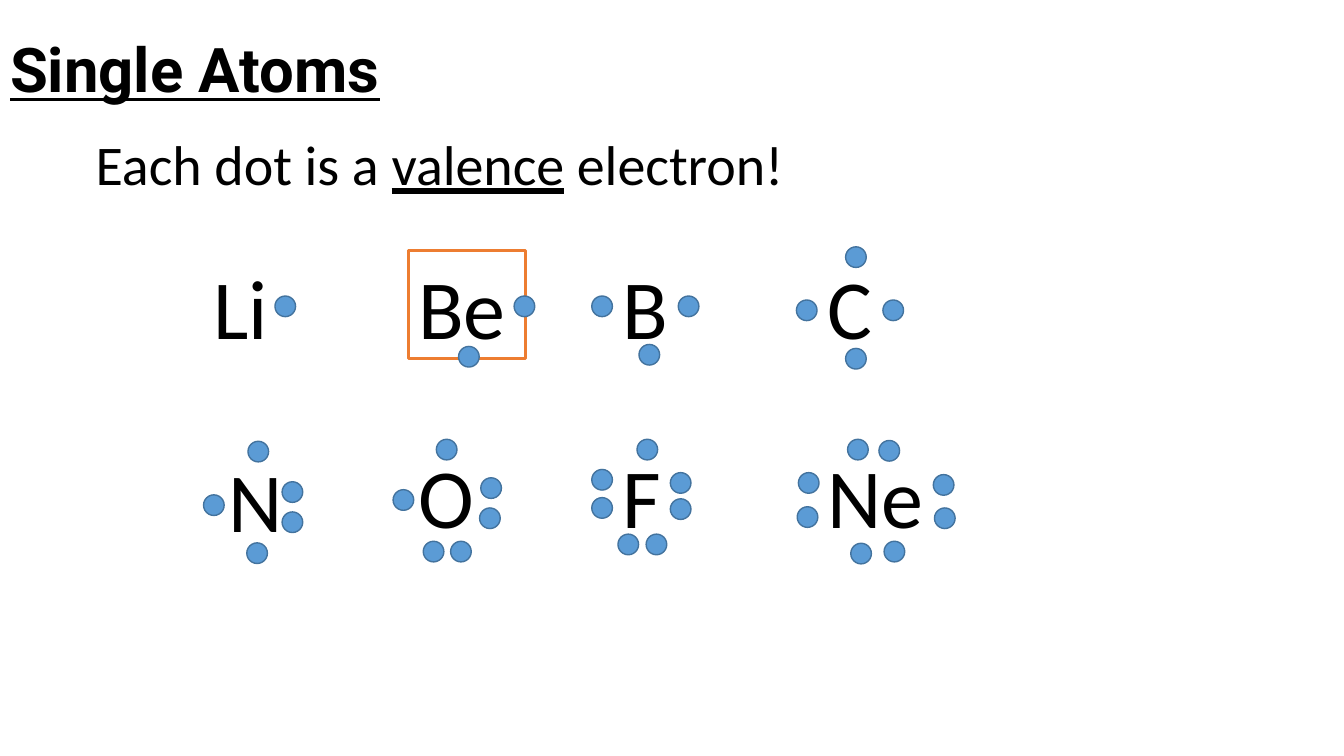
from pptx import Presentation
from pptx.dml.color import RGBColor
from pptx.enum.shapes import MSO_SHAPE
from pptx.enum.text import MSO_ANCHOR, MSO_AUTO_SIZE, PP_ALIGN
from pptx.util import Cm, Pt

HUES = {"text": "000000", "dot": "5B9BD5", "rim": "43739E", "box": "ED7D31"}
LEFT, STEP = 5.13, 5.157
ROWS = (6.32, 11.07)
DOT = 0.52

ATOMS = [
    [
        ("Li", (0, 0), [(1.8, 1.14)]),
        ("Be", (0, 0), [(2.67, 1.14), (1.27, 2.41)]),
        ("B", (0, 0), [(1.65, 1.14), (0.66, 2.36), (-0.53, 1.14)]),
        ("C", (0, 0), [(0.71, -0.1), (1.65, 1.24), (0.71, 2.46), (-0.53, 1.24)]),
    ],
    [
        ("N", (0.38, 0.1), [(0.74, -0.05), (1.6, 0.97), (1.6, 1.73),
                            (0.71, 2.51), (-0.38, 1.3)]),
        ("O", (0, 0), [(0.71, 0), (1.83, 0.97), (1.8, 1.73),
                       (1.07, 2.57), (0.38, 2.57), (-0.38, 1.27)]),
        ("F", (0, 0), [(0.61, 0), (1.45, 0.84), (1.45, 1.5), (0.84, 2.39),
                       (0.13, 2.39), (-0.53, 1.47), (-0.53, 0.76)]),
        ("Ne", (0, 0), [(0.76, 0), (1.55, 0.03), (2.92, 0.89), (2.95, 1.73),
                        (1.68, 2.57), (0.84, 2.62), (-0.51, 1.7), (-0.48, 0.84)]),
    ],
]


def hue(name):
    return RGBColor.from_string(HUES[name])


def add_run(para, text, size, face="Calibri", bold=False, under=False):
    run = para.add_run()
    run.text = text
    font = run.font
    font.name, font.size = face, Pt(size)
    font.bold, font.underline = bold, under
    font.color.rgb = hue("text")


def set_title(slide, text):
    title = slide.shapes.title
    title.left, title.top = Cm(0), Cm(0)
    title.width, title.height = Cm(33.87), Cm(3.68)
    frame = title.text_frame
    frame.vertical_anchor = MSO_ANCHOR.MIDDLE
    para = frame.paragraphs[0]
    para.alignment = PP_ALIGN.LEFT
    para.line_spacing = 0.9
    add_run(para, text, 44, "Roboto", bold=True, under=True)


def add_text(slide, x, y, wide, high):
    box = slide.shapes.add_textbox(Cm(x), Cm(y), Cm(wide), Cm(high))
    box.text_frame.word_wrap = True
    return box.text_frame


def add_intro(slide):
    para = add_text(slide, 2.16, 3.33, 29.21, 12.09).paragraphs[0]
    para.line_spacing = 0.9
    para.space_before = Pt(10)
    add_run(para, "Each dot is a ", 40)
    add_run(para, "valence", 40, under=True)
    add_run(para, " electron!", 40)


def add_shape(slide, kind, x, y, wide, high, fill, line, width):
    shape = slide.shapes.add_shape(kind, Cm(x), Cm(y), Cm(wide), Cm(high))
    shape.shadow.inherit = False
    if fill:
        shape.fill.solid()
        shape.fill.fore_color.rgb = hue(fill)
    else:
        shape.fill.background()
    shape.line.color.rgb = hue(line)
    shape.line.width = Pt(width)


def add_atom(slide, sign, x, y, dots):
    frame = add_text(slide, x, y, STEP, 2.82)
    frame.auto_size = MSO_AUTO_SIZE.SHAPE_TO_FIT_TEXT
    add_run(frame.paragraphs[0], sign, 60)
    for dx, dy in dots:
        add_shape(slide, MSO_SHAPE.OVAL, x + dx, y + dy, DOT, DOT, "dot", "rim", 1)


def main():
    """Build the slide of electron dot diagrams for single atoms."""
    deck = Presentation()
    deck.slide_width, deck.slide_height = Cm(33.87), Cm(19.05)
    slide = deck.slides.add_slide(deck.slide_layouts[5])
    add_shape(slide, MSO_SHAPE.RECTANGLE, LEFT + STEP, ROWS[0], 2.95, 2.72,
              None, "box", 2.25)
    set_title(slide, "Single Atoms")
    add_intro(slide)
    for top, atoms in zip(ROWS, ATOMS):
        for col, (sign, (dx, dy), dots) in enumerate(atoms):
            add_atom(slide, sign, LEFT + col * STEP + dx, top + dy, dots)
    deck.save("out.pptx")


if __name__ == "__main__":
    main()
